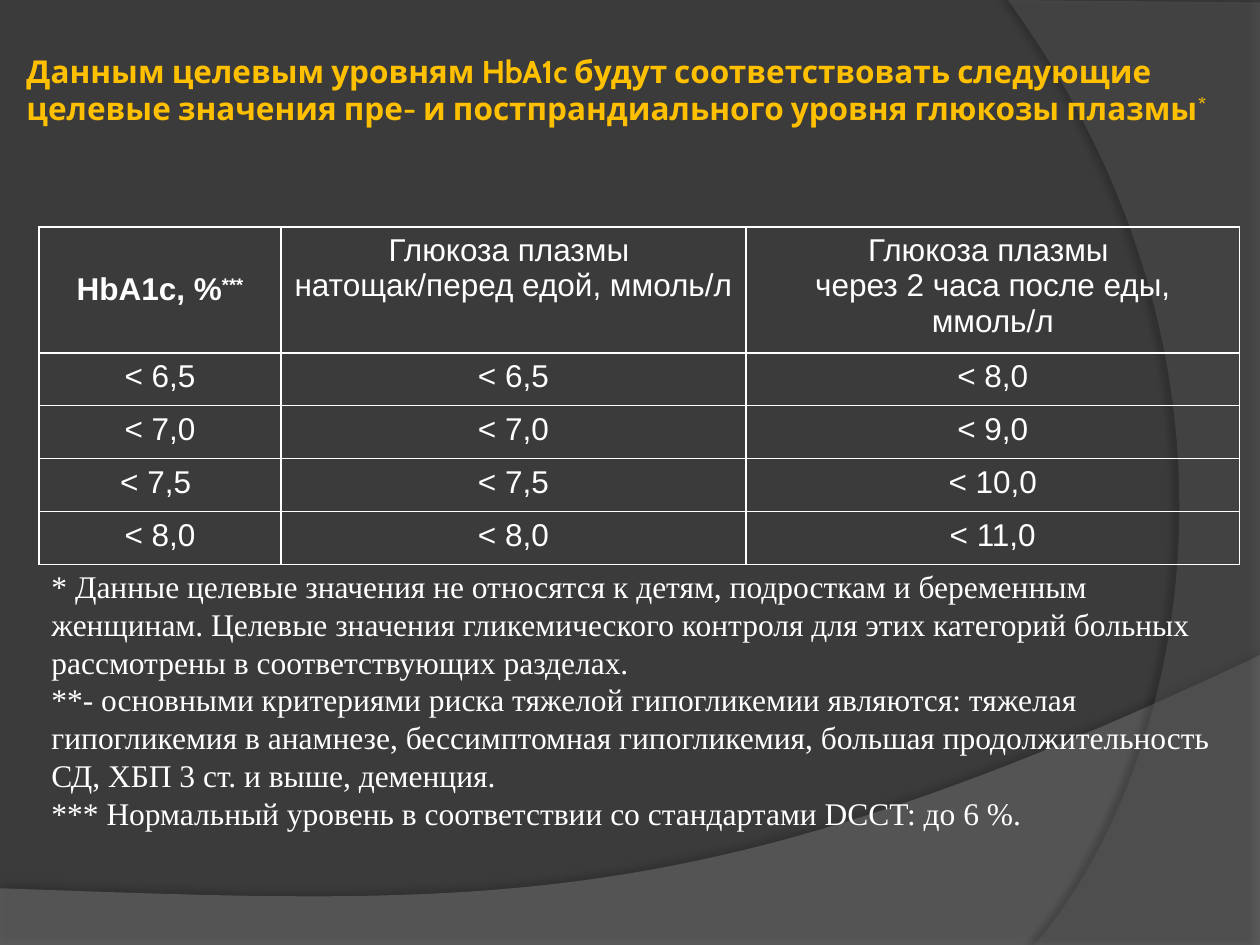
"""Build a slide of target glucose levels matched to HbA1c goals."""
from dataclasses import dataclass

from lxml import etree
from pptx import Presentation
from pptx.dml.color import RGBColor
from pptx.enum.text import MSO_ANCHOR, PP_ALIGN
from pptx.oxml.ns import qn
from pptx.util import Inches, Pt

TOP, MIDDLE = MSO_ANCHOR.TOP, MSO_ANCHOR.MIDDLE
LEFT, CENTER = PP_ALIGN.LEFT, PP_ALIGN.CENTER
CURVE_STEPS = 48


@dataclass(frozen=True)
class Theme:
    background: str = "3B3B3B"
    text: str = "FFFFFF"
    accent: str = "FFC000"
    wave: str = "7F7F7F"
    arc: str = "5E5E5E"
    shadow: str = "000000"
    size: int = 18
    border: int = 1
    title_font: str = "Cabin"
    table_font: str = "Arial"
    note_font: str = "Times New Roman"


def add_alpha(color_node, alpha):
    etree.SubElement(color_node, qn("a:alpha"), val=str(alpha * 1000))


def bezier(start, first, second, end):
    for step in range(1, CURVE_STEPS + 1):
        t = step / CURVE_STEPS
        weights = ((1 - t) ** 3, 3 * t * (1 - t) ** 2, 3 * t * t * (1 - t), t ** 3)
        yield tuple(
            sum(w * point[axis] for w, point in zip(weights, (start, first, second, end)))
            for axis in (0, 1)
        )


class SlideBuilder:
    def __init__(self, slide, theme):
        self.slide = slide
        self.theme = theme
        fill = slide.background.fill
        fill.solid()
        fill.fore_color.rgb = RGBColor.from_string(theme.background)

    def swoosh(self, corners, curve, color, alpha, shadow):
        points = [*corners, *bezier(corners[-1], *curve)]
        start, *rest = [(Inches(x), Inches(y)) for x, y in points]
        builder = self.slide.shapes.build_freeform(*start)
        builder.add_line_segments(rest, close=True)
        shape = builder.convert_to_shape()
        shape.line.fill.background()
        shape.fill.solid()
        shape.fill.fore_color.rgb = RGBColor.from_string(color)
        shape.shadow.inherit = False
        properties = shape.element.spPr
        add_alpha(properties.find(qn("a:solidFill"))[0], alpha)
        opacity, blur, distance, angle = shadow
        outer = etree.SubElement(
            properties.find(qn("a:effectLst")), qn("a:outerShdw"),
            blurRad=str(Pt(blur)), dist=str(Pt(distance)),
            dir=str(angle * 60000), rotWithShape="0")
        add_alpha(etree.SubElement(outer, qn("a:srgbClr"), val=self.theme.shadow), opacity)

    def fill_text(self, frame, paragraphs, font, color, align=LEFT):
        for index, runs in enumerate(paragraphs):
            paragraph = frame.add_paragraph() if index else frame.paragraphs[0]
            paragraph.alignment = align
            for text, bold, baseline in runs:
                run = paragraph.add_run()
                run.text = text
                look = {"name": font, "size": Pt(self.theme.size), "bold": bold}
                for key, value in look.items():
                    setattr(run.font, key, value)
                run.font.color.rgb = RGBColor.from_string(color)
                if baseline:
                    run._r.get_or_add_rPr().set("baseline", str(baseline * 1000))

    def text(self, box, paragraphs, font, color, margins):
        frame = self.slide.shapes.add_textbox(*map(Inches, box)).text_frame
        layout = {"word_wrap": True, "vertical_anchor": TOP}
        layout.update({f"margin_{side}": Inches(gap) for side, gap in margins.items()})
        for key, value in layout.items():
            setattr(frame, key, value)
        self.fill_text(frame, paragraphs, font, color)

    def border(self, cell):
        properties = cell._tc.get_or_add_tcPr()
        for index, side in enumerate(("lnL", "lnR", "lnT", "lnB")):
            line = etree.Element(qn(f"a:{side}"), w=str(Pt(self.theme.border)))
            fill = etree.SubElement(line, qn("a:solidFill"))
            etree.SubElement(fill, qn("a:srgbClr"), val=self.theme.text)
            properties.insert(index, line)

    def table(self, left, top, widths, heights, rows):
        grid = self.slide.shapes.add_table(
            len(heights), len(widths), Inches(left), Inches(top),
            Inches(sum(widths)), Inches(sum(heights))).table
        for flag in ("first_row", "horz_banding"):
            setattr(grid, flag, False)
        for column, width in zip(grid.columns, widths):
            column.width = Inches(width)
        for row, height in zip(grid.rows, heights):
            row.height = Inches(height)
        for row_index, row in enumerate(rows):
            for column_index, paragraphs in enumerate(row):
                cell = grid.cell(row_index, column_index)
                cell.fill.background()
                cell.vertical_anchor = TOP if row_index or column_index else MIDDLE
                self.border(cell)
                self.fill_text(cell.text_frame, paragraphs, self.theme.table_font,
                               self.theme.text, CENTER)


def plain(*lines):
    return [[(line, False, 0)] for line in lines]


HEADER = [
    [[("HbA1c, %", True, 0), ("***", True, 30)]],
    plain("Глюкоза плазмы ", "натощак/перед едой, ммоль/л"),
    plain("Глюкоза плазмы ", "через 2 часа после еды, ммоль/л"),
]
TARGETS = [
    ("< 6,5", "< 6,5", "< 8,0"),
    ("< 7,0", "< 7,0", "< 9,0"),
    ("< 7,5 ", "< 7,5", "< 10,0"),
    ("< 8,0", "< 8,0", "< 11,0"),
]
TITLE = (
    "Данным целевым уровням HbA1c будут соответствовать следующие целевые "
    "значения пре- и постпрандиального уровня глюкозы плазмы"
)
NOTES = (
    "* Данные целевые значения не относятся к детям, подросткам и беременным "
    "женщинам. Целевые значения гликемического контроля для этих категорий "
    "больных рассмотрены в соответствующих разделах.",
    "**- основными критериями риска тяжелой гипогликемии являются: тяжелая "
    "гипогликемия в анамнезе, бессимптомная гипогликемия, большая "
    "продолжительность СД, ХБП 3 ст. и выше, деменция.",
    "*** Нормальный уровень в соответствии со стандартами DCCT: до 6 %.",
)


def main():
    theme = Theme()
    deck = Presentation()
    deck.slide_width, deck.slide_height = Inches(10), Inches(7.5)
    page = SlideBuilder(deck.slides.add_slide(deck.slide_layouts[6]), theme)

    page.swoosh([(0, 7.05), (0, 7.5), (10, 7.5), (10, 5.2)],
                [(5.59, 7.29), (3.91, 7.19), (0, 7.05)],
                theme.wave, 45, (35, 4, 3.5, 270))
    page.swoosh([(10, 0.02), (10, 7.5), (8.21, 7.5)],
                [(9.35, 6.19), (10.18, 3), (8, 0)],
                theme.arc, 40, (45, 4, 4, 180))
    page.text((0.16, 0.31, 9.61, 3.75), [[(TITLE, True, 0), ("*", True, 30)]],
              theme.title_font, theme.accent,
              {"left": 0.05, "right": 0.05, "top": 0.1, "bottom": 0.05})
    page.table(0.31, 1.8, [1.92, 3.69, 3.92], [0.74] + [0.42] * len(TARGETS),
               [HEADER] + [[plain(value) for value in row] for row in TARGETS])
    page.text((0.31, 4.45, 9.45, 2.22), plain(*NOTES),
              theme.note_font, theme.text,
              {"left": 0.1, "right": 0.1, "top": 0.05, "bottom": 0.05})

    deck.save("out.pptx")


if __name__ == "__main__":
    main()
